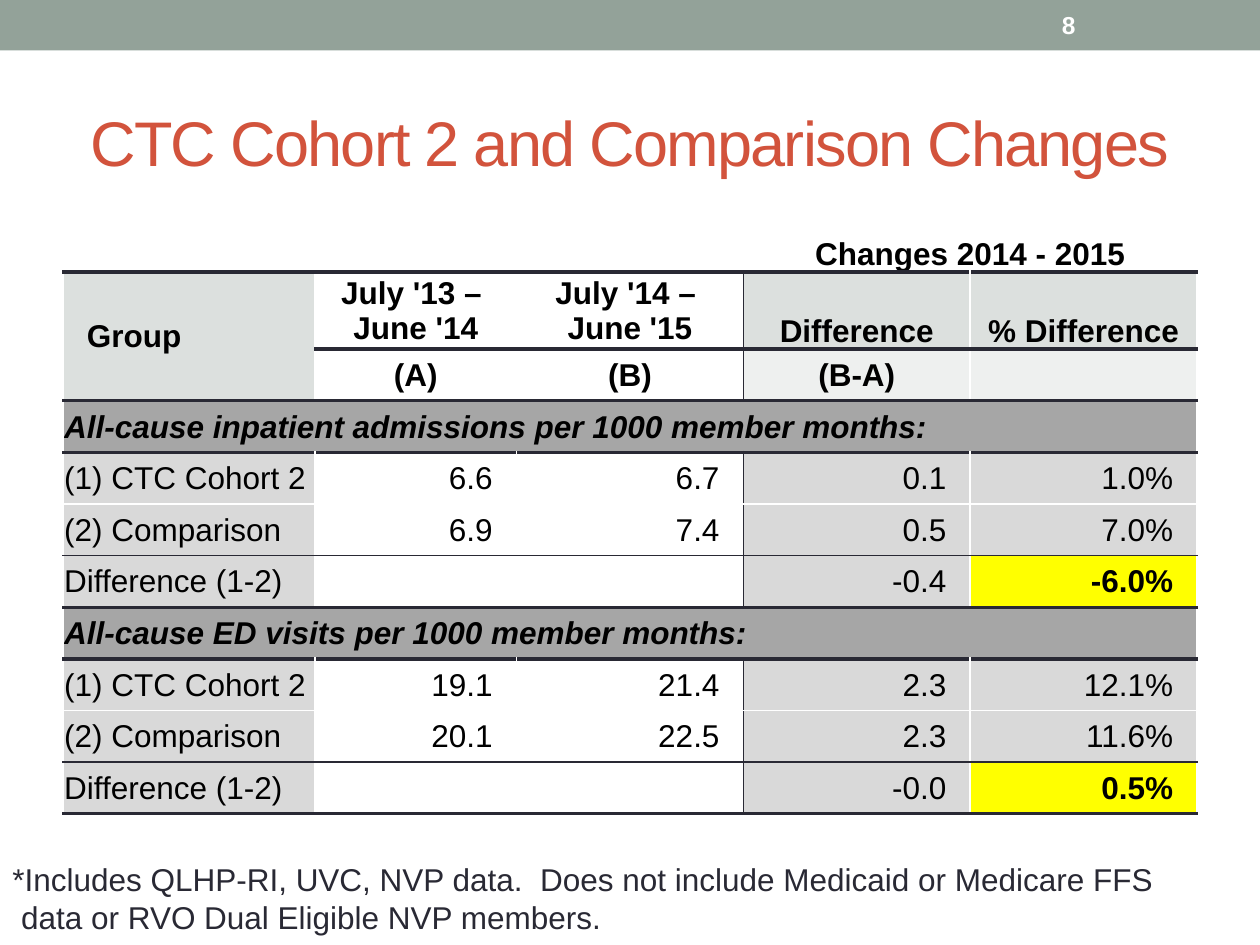
from lxml import etree
from pptx import Presentation, util as u
from pptx.dml.color import RGBColor
from pptx.enum import shapes, text
from pptx.oxml.ns import qn

COLORS = dict(band="93A299", title="D2533C", ink="292934", black="000000", white="FFFFFF",
              header="DCE0DE", subheader="EEF0EF", section="A6A6A6", label="D9D9D9", key="FFFF00")
WIDTH, HEIGHT = 10, 7.5
COLUMNS = [2, 1.6, 1.8, 1.8, 1.8]
ROW, HEADER_ROW = 0.41, 0.57
LEFT, CENTER, RIGHT = text.PP_ALIGN.LEFT, text.PP_ALIGN.CENTER, text.PP_ALIGN.RIGHT
MIDDLE, BOTTOM = text.MSO_ANCHOR.MIDDLE, text.MSO_ANCHOR.BOTTOM

ROWS = [
    ["", "", "", "Changes 2014 - 2015", ""],
    ["Group", "July '13 – \nJune '14", "July '14 – \nJune '15", "Difference", "% Difference"],
    ["", "(A)", "(B)", "(B-A)", ""],
    ["All-cause inpatient admissions per 1000 member months:", "", "", "", ""],
    ["(1) CTC Cohort 2", "6.6", "6.7", "0.1", "1.0%"],
    ["(2) Comparison", "6.9", "7.4", "0.5", "7.0%"],
    ["Difference (1-2)", "", "", "-0.4", "-6.0%"],
    ["All-cause ED visits per 1000 member months:", "", "", "", ""],
    ["(1) CTC Cohort 2", "19.1", "21.4", "2.3", "12.1%"],
    ["(2) Comparison", "20.1", "22.5", "2.3", "11.6%"],
    ["Difference (1-2)", "", "", "-0.0", "0.5%"],
]
SECTIONS, TOTALS = (3, 7), (6, 10)
HEAVY, THIN, PALE = ("ink", 2.25), ("ink", 1), ("white", 1)
RULES = [PALE, HEAVY, HEAVY, HEAVY, HEAVY, PALE, THIN, HEAVY, HEAVY, PALE, THIN, HEAVY]


def color(name):
    return RGBColor.from_string(COLORS[name])


def write(para, words, size, ink, align=LEFT, **style):
    para.text = words
    para.alignment = align
    for span in para.runs:
        span.font.color.rgb = color(ink)
        for name, value in dict(name="Arial", size=u.Pt(size), **style).items():
            setattr(span.font, name, value)


def inches(*box):
    return [u.Inches(value) for value in box]


def add_band(page, box):
    band = page.shapes.add_shape(shapes.MSO_SHAPE.RECTANGLE, *inches(*box))
    band.shadow.inherit = False
    band.fill.solid()
    band.fill.fore_color.rgb = color("band")
    band.line.fill.background()


def add_title(page, box):
    title = page.shapes.title
    title.left, title.top, title.width, title.height = inches(*box)
    title.text_frame.vertical_anchor = MIDDLE
    para = title.text_frame.paragraphs[0]
    write(para, "CTC Cohort 2 and Comparison Changes", 36, "title", CENTER)
    for span in para.runs:
        span.font._element.set("spc", "-100")


def add_text(page, box, lines, size, ink, wrap, anchor=text.MSO_ANCHOR.TOP, **style):
    frame = page.shapes.add_textbox(*inches(*box)).text_frame
    frame.word_wrap = wrap
    frame.vertical_anchor = anchor
    for index, line in enumerate(lines):
        para = frame.add_paragraph() if index else frame.paragraphs[0]
        write(para, line, size, ink, **style)


def cell_fill(row, column):
    if row in SECTIONS:
        return "section"
    if row == 0 or column in (1, 2):
        return "white"
    if row in (1, 2):
        return "header" if row == 1 or column == 0 else "subheader"
    return "key" if row in TOTALS and column == 4 else "label"


def upright(row, edge):
    return THIN if edge == 3 and row > 0 and row not in SECTIONS else PALE


def add_border(cell, side, rule):
    name, width = rule
    line = etree.SubElement(cell._tc.get_or_add_tcPr(), qn(f"a:ln{side}"), w=str(u.Pt(width)))
    fill = etree.SubElement(line, qn("a:solidFill"))
    etree.SubElement(fill, qn("a:srgbClr"), val=COLORS[name])


def format_cell(cell, row, column):
    sides = dict(L=upright(row, column), R=upright(row, column + 1), T=RULES[row], B=RULES[row + 1])
    for side, rule in sides.items():
        if not (cell.is_spanned and side in "LR"):
            add_border(cell, side, rule)
    cell.fill.solid()
    cell.fill.fore_color.rgb = color(cell_fill(row, column))

    body = row > 2 and row not in SECTIONS
    number = body and column > 0
    low = row == 0 or (row == 1 and column > 2)
    layout = dict(margin_left=u.Inches(0.19 if (row, column) == (1, 0) else 0.01),
                  margin_right=u.Inches(0.19 if number else 0.01),
                  margin_top=u.Inches(0.01), margin_bottom=0,
                  vertical_anchor=BOTTOM if low else MIDDLE)
    for name, value in layout.items():
        setattr(cell, name, value)
    if ROWS[row][column]:
        align = RIGHT if number else CENTER if row < 3 and column else LEFT
        write(cell.text_frame.paragraphs[0], ROWS[row][column], 18, "black", align,
              bold=not body or cell_fill(row, column) == "key", italic=row in SECTIONS)


def add_results(page, left, top):
    heights = [HEADER_ROW if row == 1 else ROW for row in range(len(ROWS))]
    box = inches(left, top, sum(COLUMNS), sum(heights))
    table = page.shapes.add_table(len(ROWS), len(COLUMNS), *box).table
    table.first_row = table.horz_banding = False
    for column, width in zip(table.columns, COLUMNS):
        column.width = u.Inches(width)
    for row, height in zip(table.rows, heights):
        row.height = u.Inches(height)
    table.cell(0, 3).merge(table.cell(0, 4))
    table.cell(1, 0).merge(table.cell(2, 0))
    for row in SECTIONS:
        table.cell(row, 0).merge(table.cell(row, 4))
    for row in range(len(ROWS)):
        for column in range(len(COLUMNS)):
            format_cell(table.cell(row, column), row, column)


def main():
    deck = Presentation()
    deck.slide_width, deck.slide_height = inches(WIDTH, HEIGHT)
    page = deck.slides.add_slide(deck.slide_layouts[5])
    margin = WIDTH * 0.05
    add_band(page, (0, 0, WIDTH, 0.4))
    add_title(page, (margin, 0.58, WIDTH - 2 * margin, 1.08))
    add_text(page, (8.33, 0.02, 1.17, 0.36), ["8"], 14, "white", True, MIDDLE, bold=True)
    add_results(page, margin, 1.75)
    add_text(page, (0, 6.78, 9.37, 0.71),
             ["*Includes QLHP-RI, UVC, NVP data.  Does not include Medicaid or Medicare FFS",
              " data or RVO Dual Eligible NVP members."], 18, "ink", False)
    deck.save("out.pptx")


if __name__ == "__main__":
    main()
